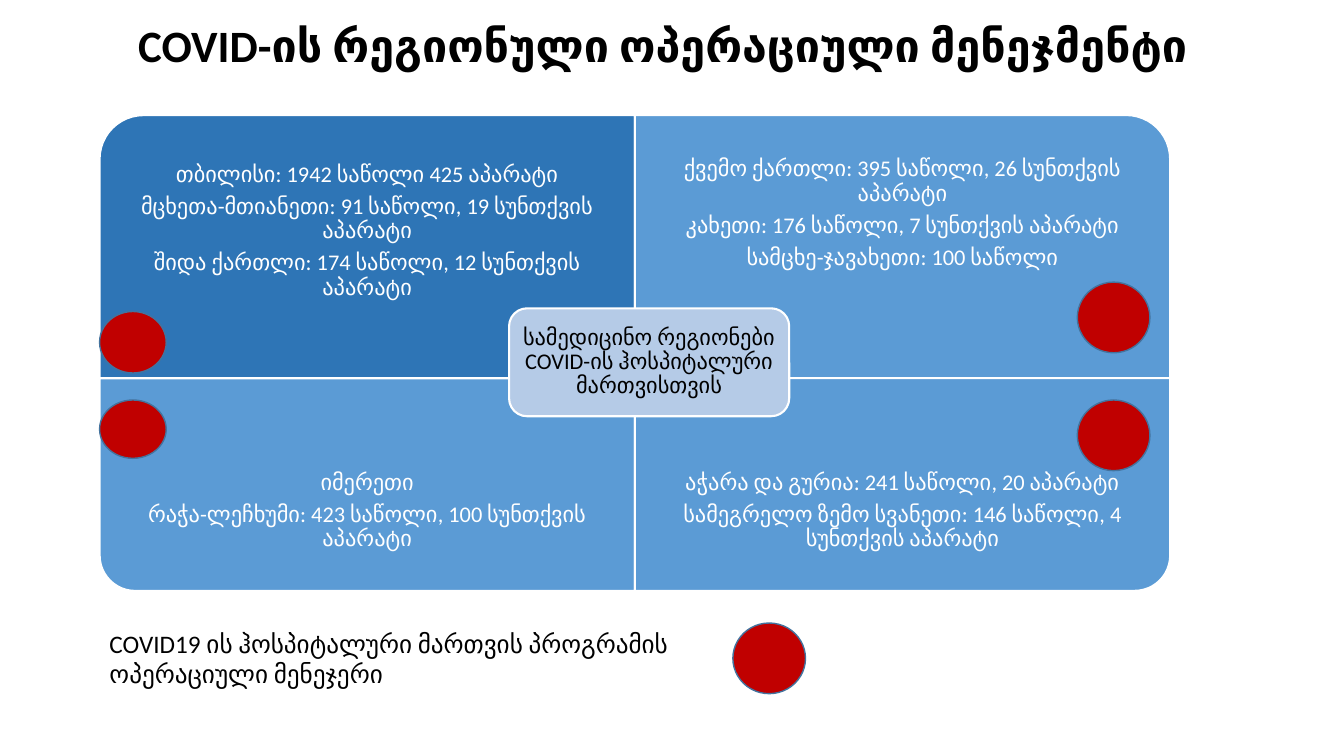
from dataclasses import dataclass
from pptx import Presentation
from pptx.dml.color import RGBColor
from pptx.enum.shapes import MSO_SHAPE
from pptx.enum.text import MSO_ANCHOR, MSO_AUTO_SIZE, PP_ALIGN
from pptx.util import Cm, Pt


@dataclass(frozen=True)
class Theme:
    font: str = "Calibri"
    black: str = "000000"
    white: str = "FFFFFF"
    deep: str = "2E75B6"
    blue: str = "5B9BD5"
    pale: str = "B5CBE7"
    red: str = "C00000"
    edge: str = "43739E"
    head: int = 32
    body: int = 16
    note: int = 18


class Board:
    def __init__(self, slide, theme):
        self.slide, self.theme = slide, theme

    def fill_text(self, frame, lines, size, color, bold=False, inset=None,
                  align=PP_ALIGN.CENTER, anchor=MSO_ANCHOR.MIDDLE, gap=0.0, tight=0.9):
        frame.word_wrap = True
        frame.auto_size = MSO_AUTO_SIZE.NONE
        frame.vertical_anchor = anchor
        if inset is not None:
            frame.margin_left = frame.margin_right = Cm(inset)
            frame.margin_top = frame.margin_bottom = Cm(inset)
        for i, line in enumerate(lines):
            para = frame.add_paragraph() if i else frame.paragraphs[0]
            para.text = line
            para.alignment = align
            para.line_spacing = tight
            para.space_after = Pt(gap)
            para.font.name, para.font.size, para.font.bold = self.theme.font, Pt(size), bold
            para.font.color.rgb = RGBColor.from_string(color)

    def title(self, text, x, y, w, h):
        box = self.slide.shapes.title
        box.left, box.top, box.width, box.height = Cm(x), Cm(y), Cm(w), Cm(h)
        self.fill_text(box.text_frame, [text], self.theme.head, self.theme.black, bold=True,
                       anchor=MSO_ANCHOR.TOP)
        box.text_frame.margin_top = Cm(0.6)

    def shape(self, kind, x, y, w, h, fill, line, width):
        item = self.slide.shapes.add_shape(kind, Cm(x), Cm(y), Cm(w), Cm(h))
        item.shadow.inherit = False
        item.fill.solid()
        item.fill.fore_color.rgb = RGBColor.from_string(fill)
        item.line.color.rgb = RGBColor.from_string(line)
        item.line.width = Pt(width)
        return item

    def text(self, x, y, w, h, lines, size, color, **style):
        frame = self.slide.shapes.add_textbox(Cm(x), Cm(y), Cm(w), Cm(h)).text_frame
        self.fill_text(frame, lines, size, color, **style)
        return frame

    def panel(self, x, y, w, h, turn, fill):
        # A quarter turn swaps the sides around the same centre
        wide, tall = (h, w) if turn % 180 else (w, h)
        item = self.shape(MSO_SHAPE.ROUND_1_RECTANGLE, x + (w - wide) / 2, y + (h - tall) / 2,
                          wide, tall, fill, self.theme.white, 1.5)
        item.rotation = turn

    def dot(self, x, y, w=1.83, h=1.78):
        self.shape(MSO_SHAPE.OVAL, x, y, w, h, self.theme.red, self.theme.edge, 1)


def main():
    deck = Presentation()
    deck.slide_width, deck.slide_height = Cm(33.87), Cm(19.05)
    theme = Theme()
    board = Board(deck.slides.add_slide(deck.slide_layouts[5]), theme)

    board.title("COVID-ის რეგიონული ოპერაციული მენეჯმენტი", 2.11, 0, 29.21, 3.68)

    # Four regions: column, row, turn, fill, extra space above the text, lines
    left, top, wide, high, low = 2.51, 2.9, 13.49, 6.63, 5.36
    regions = [
        (0, 0, 270, theme.deep, 0.9, ["თბილისი: 1942 საწოლი 425 აპარატი",
                                      "მცხეთა-მთიანეთი: 91 საწოლი, 19 სუნთქვის აპარატი",
                                      "შიდა ქართლი: 174 საწოლი, 12 სუნთქვის აპარატი"]),
        (1, 0, 0, theme.blue, 0, ["ქვემო ქართლი: 395 საწოლი, 26 სუნთქვის აპარატი",
                                  "კახეთი: 176 საწოლი, 7 სუნთქვის აპარატი",
                                  "სამცხე-ჯავახეთი: 100 საწოლი"]),
        (0, 1, 180, theme.blue, 0, ["იმერეთი",
                                    "რაჭა-ლეჩხუმი: 423 საწოლი, 100 სუნთქვის აპარატი"]),
        (1, 1, 90, theme.blue, 0, ["აჭარა და გურია: 241 საწოლი, 20 აპარატი",
                                   "სამეგრელო ზემო სვანეთი: 146 საწოლი, 4 სუნთქვის აპარატი"]),
    ]
    for col, row, turn, fill, drop, lines in regions:
        x, y, h = left + col * wide, top + row * high, low if row else high
        board.panel(x, y, wide, h, turn, fill)
        # Text keeps to the outer three quarters, clear of the hub
        frame = board.text(x, y + row * h / 4, wide, h * 0.75, lines, theme.body, theme.white,
                           inset=0.3, gap=5.6)
        frame.margin_top = Cm(0.3 + drop)

    # Hub
    hub = board.shape(MSO_SHAPE.ROUNDED_RECTANGLE, 12.83, 7.77, 7.06, 2.72,
                      theme.pale, theme.white, 1.5)
    board.fill_text(hub.text_frame, ["სამედიცინო რეგიონები COVID-ის ჰოსპიტალური მართვისთვის"],
                    theme.body, theme.black, inset=0.18, gap=5.6)

    # Legend
    board.text(left, 15.7, 16.87, 1.8,
               ["COVID19 ის ჰოსპიტალური მართვის პროგრამის ოპერაციული მენეჯერი"],
               theme.note, theme.black, align=PP_ALIGN.LEFT, anchor=MSO_ANCHOR.TOP, tight=1.0)

    # Manager dots
    board.dot(27.15, 10.08)
    board.dot(left, 10.08, 1.68, 1.47)
    board.dot(27.15, 7.11)
    board.dot(left, 7.85, 1.68, 1.55)
    board.dot(18.47, 15.7)

    deck.save("out.pptx")


if __name__ == "__main__":
    main()
